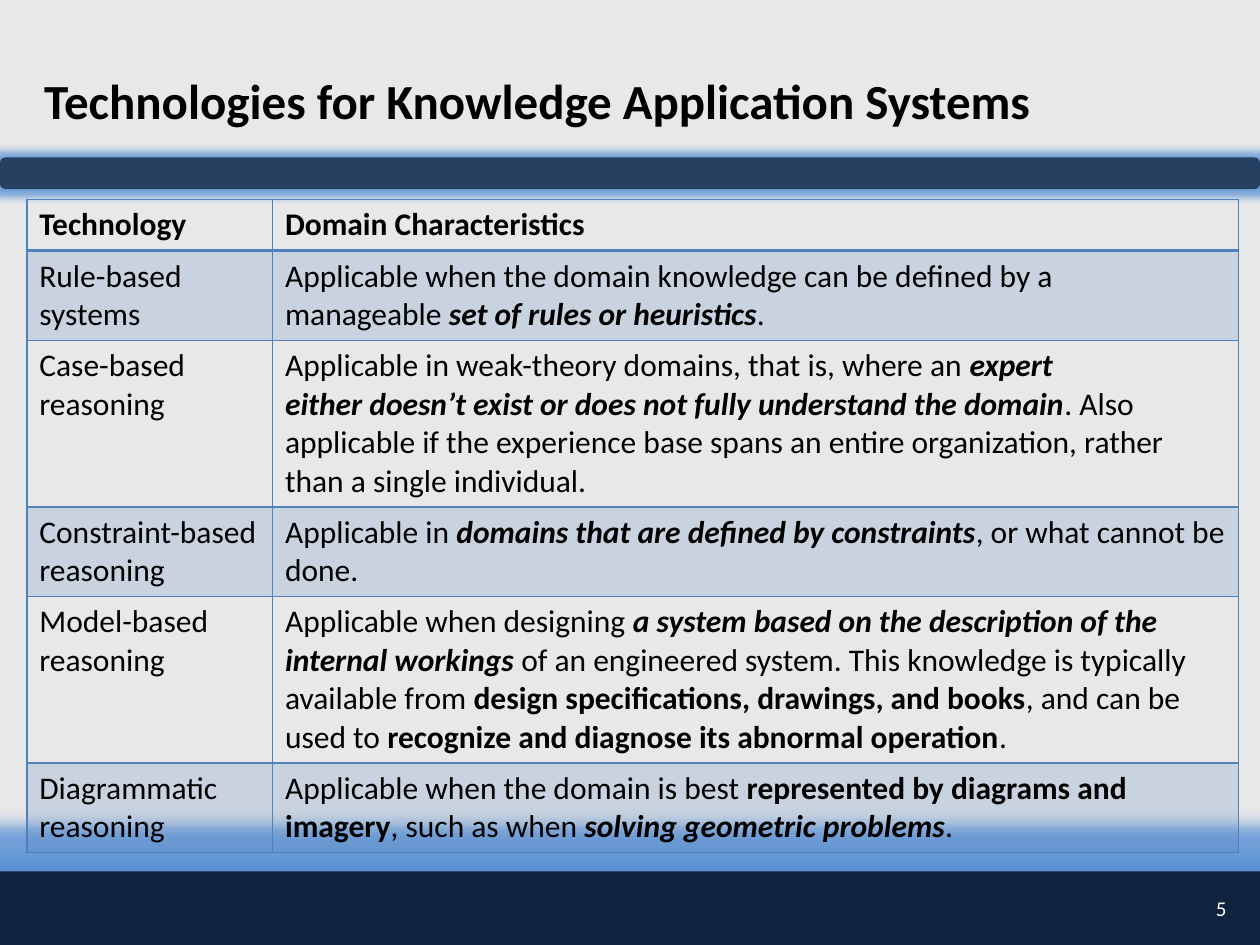
"""Build the slide on technologies for knowledge application systems."""
from lxml.etree import SubElement
from pptx import Presentation
from pptx.dml.color import RGBColor as RGB
from pptx.enum.shapes import MSO_SHAPE as SHAPE
from pptx.enum.text import MSO_ANCHOR as ANCHOR, PP_ALIGN as ALIGN
from pptx.oxml.ns import qn
from pptx.util import Inches, Pt

COLORS = {"back": "E8E8E8", "navy": "0F243E", "bar": "254061", "glow": "558ED5",
          "accent": "4F81BD", "black": "000000", "white": "FFFFFF"}
STYLES = {"*": {"bold": True, "italic": True}, "_": {"bold": True}}
ROWS = [
    ("_Technology", "_Domain Characteristics"),
    ("Rule-based systems",
     "Applicable when the domain knowledge can be defined by a\n"
     "manageable |*set of rules or heuristics|."),
    ("Case-based reasoning",
     "Applicable in weak-theory domains, that is, where an |*expert\n"
     "*either doesn’t exist or does not fully understand the domain|"
     ". Also applicable if the experience base spans an entire organization, "
     "rather than a single individual."),
    ("Constraint-based reasoning",
     "Applicable in |*domains that are defined by constraints|, or what cannot be done."),
    ("Model-based reasoning",
     "Applicable when designing |*a system based on the description of the internal "
     "workings |of an engineered system. This knowledge is typically available from |"
     "_design specifications, drawings, and books|, and can be used to |"
     "_recognize and diagnose its abnormal operation|."),
    ("Diagrammatic reasoning",
     "Applicable when the domain is best |_represented by diagrams and\n"
     "_imagery|, such as when |*solving geometric problems|."),
]


class Deck:
    """Hold the style and the current slide; lengths are on a 120 by 90 grid."""

    def __init__(self, width=10, height=7.5, font="Calibri"):
        self.prs = Presentation()
        self.prs.slide_width, self.prs.slide_height = Inches(width), Inches(height)
        self.unit, self.font = self.prs.slide_width / 120, font
        self.s = self.prs.slides.add_slide(self.prs.slide_layouts[5])
        fill = self.s.background.fill
        fill.solid()
        fill.fore_color.rgb = RGB.from_string(COLORS["back"])

    def box(self, *cells):
        """Turn grid units into slide lengths."""
        return [round(c * self.unit) for c in cells]

    def color(self, parent, name, alpha=100):
        """Add a colour element with its opacity in percent."""
        clr = SubElement(parent, qn("a:srgbClr"), val=COLORS[name])
        SubElement(clr, qn("a:alpha"), val=str(alpha * 1000))

    def text(self, tf, text, size, color="black", align=ALIGN.LEFT):
        """Set lines of runs parted by bars, each led by its style mark."""
        for i, line in enumerate(text.split("\n")):
            p = tf.add_paragraph() if i else tf.paragraphs[0]
            p.alignment = align
            for part in line.split("|"):
                r, style = p.add_run(), STYLES.get(part[0], {})
                r.text = part[1:] if style else part
                look = {"name": self.font, "size": Pt(size), "bold": False,
                        "italic": False, **style}
                for key, value in look.items():
                    setattr(r.font, key, value)
                r.font.color.rgb = RGB.from_string(COLORS[color])

    def band(self, kind, cells, color, radius, alpha):
        """Draw a full-width band with a glow."""
        sp = self.s.shapes.add_shape(kind, *self.box(*cells))
        sp.fill.solid()
        sp.fill.fore_color.rgb = RGB.from_string(COLORS[color])
        sp.line.fill.background()
        sp.shadow.inherit = False
        effects = sp._element.spPr.find(qn("a:effectLst"))
        glow = SubElement(effects, qn("a:glow"), rad=str(Pt(radius)))
        self.color(glow, "glow", alpha)

    def title(self, text, cells):
        """Place and fill the title placeholder."""
        sp = self.s.shapes.title
        sp.left, sp.top, sp.width, sp.height = self.box(*cells)
        sp.text_frame.vertical_anchor = ANCHOR.MIDDLE
        self.text(sp.text_frame, text, 28)

    def number(self, text, cells):
        """Add the page number."""
        tf = self.s.shapes.add_textbox(*self.box(*cells)).text_frame
        tf.word_wrap, tf.vertical_anchor = True, ANCHOR.MIDDLE
        self.text(tf, text, 12, "white", ALIGN.RIGHT)

    def style_cell(self, cell, row):
        """Rule a cell and tint every second row."""
        tcPr = cell._tc.get_or_add_tcPr()
        widths = {"L": 1, "R": 1, "T": 2 if row == 1 else 1, "B": 1 if row else 2}
        for side, width in widths.items():
            ln = SubElement(tcPr, qn(f"a:ln{side}"), w=str(Pt(width)))
            self.color(SubElement(ln, qn("a:solidFill")), "accent")
        if row % 2:
            self.color(SubElement(tcPr, qn("a:solidFill")), "accent", 20)
        else:
            cell.fill.background()

    def table(self, rows, left, top, widths, height):
        """Add the table; its rows grow with their text."""
        cells = self.box(left, top, sum(widths), height * len(rows))
        tbl = self.s.shapes.add_table(len(rows), len(widths), *cells).table
        tbl.first_row = tbl.horz_banding = False
        for col, width in zip(tbl.columns, self.box(*widths)):
            col.width = width
        for i, texts in enumerate(rows):
            for j, text in enumerate(texts):
                cell = tbl.cell(i, j)
                self.text(cell.text_frame, text, 18)
                self.style_cell(cell, i)


def main():
    """Build and save the deck."""
    deck = Deck()
    deck.band(SHAPE.RECTANGLE, (0, 83, 120, 7), "navy", 18, 80)
    deck.band(SHAPE.ROUNDED_RECTANGLE, (0, 15, 120, 3), "bar", 8, 80)
    deck.table(ROWS, 2.55, 19, (23.4, 92), 4.9)
    deck.title("_Technologies for Knowledge Application Systems", (3, 5, 115, 9))
    deck.number("5", (113, 84, 5, 5))
    deck.prs.save("out.pptx")


if __name__ == "__main__":
    main()
